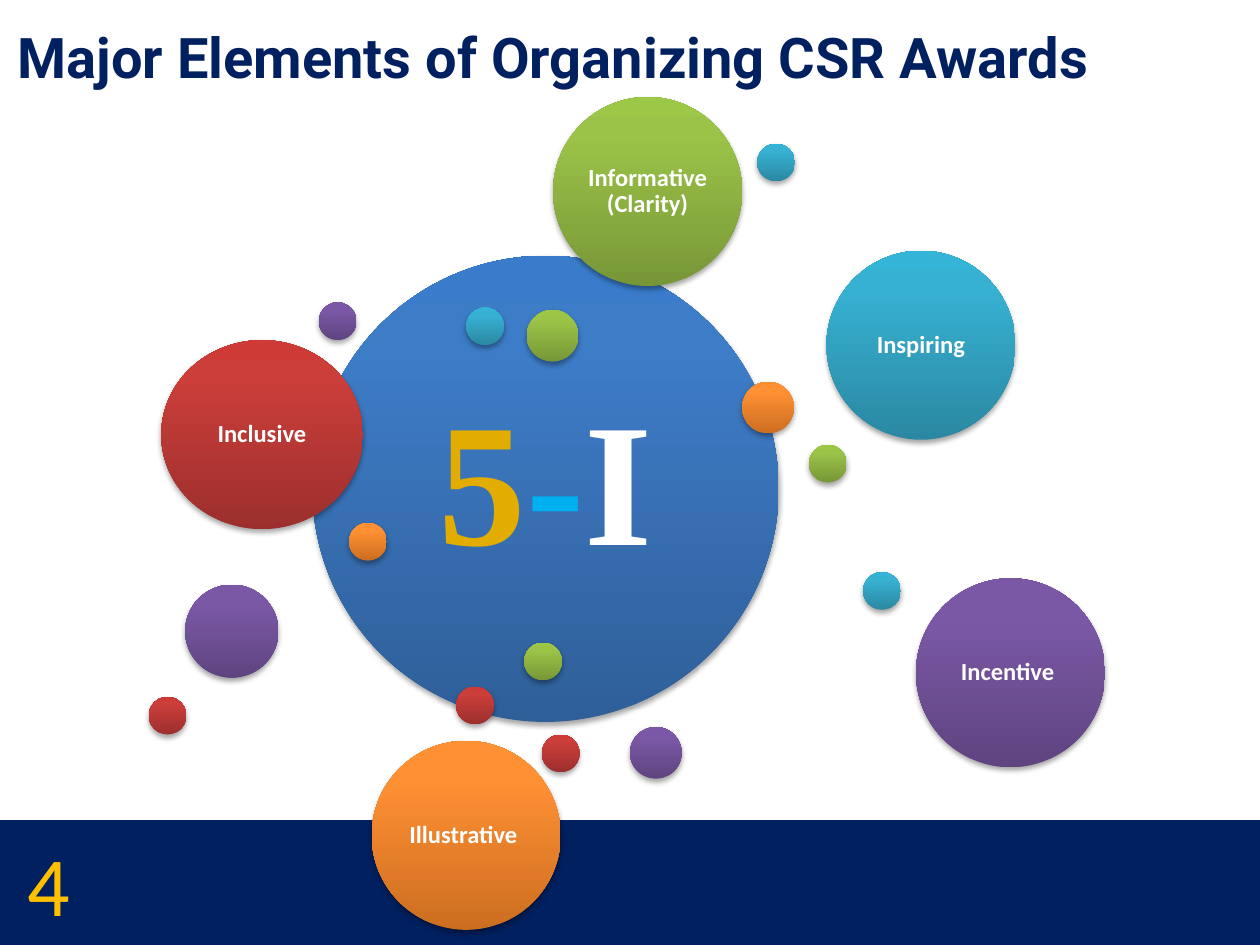
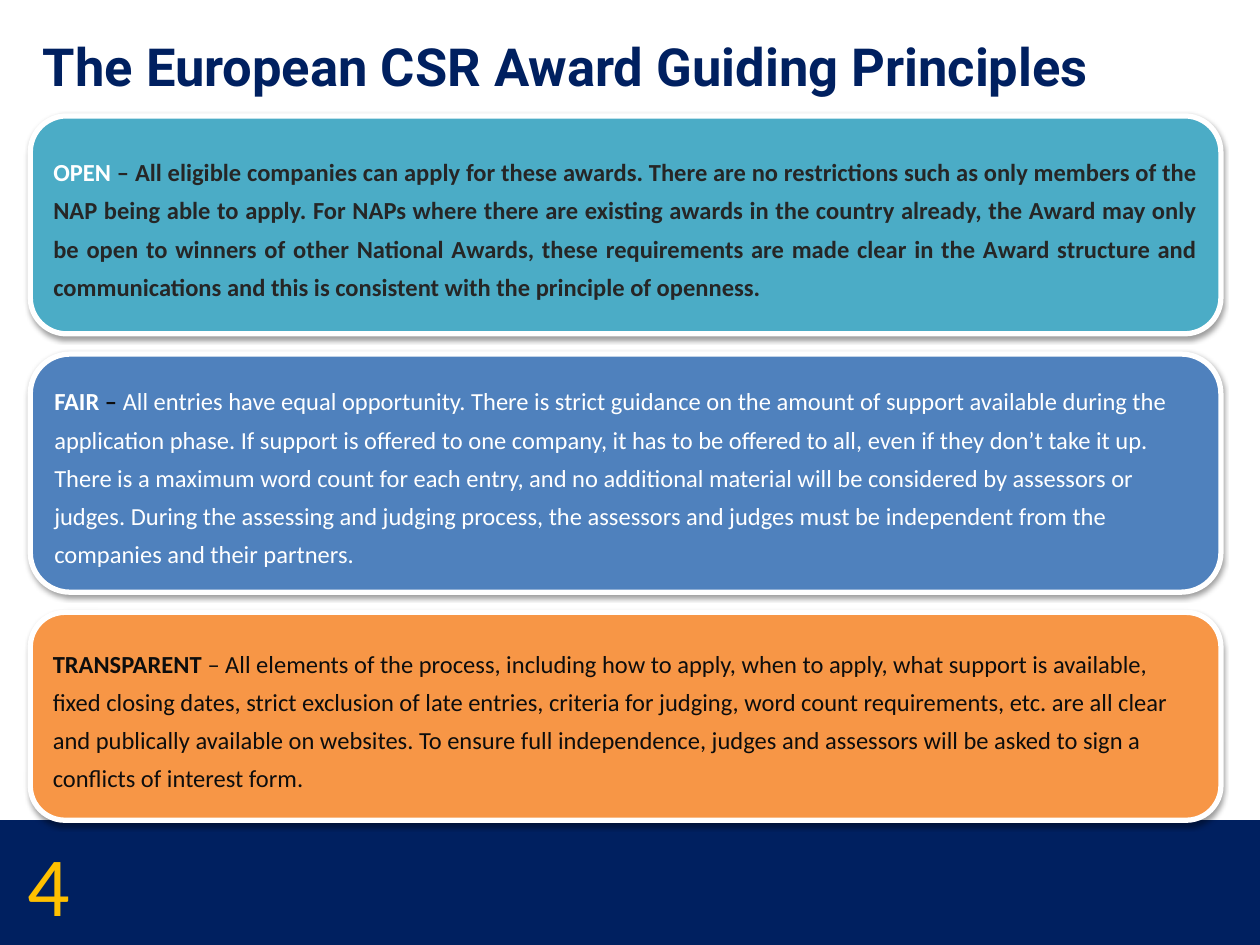
from dataclasses import dataclass

from lxml import etree
from pptx import Presentation
from pptx import util as u
from pptx.dml import color
from pptx.enum import shapes, text
from pptx.oxml import ns


@dataclass(frozen=True)
class Theme:
    navy: str = "002060"
    gold: str = "FFC000"
    amber: str = "E2AC00"
    sky: str = "00B0F0"
    white: str = "FFFFFF"
    ink: str = "0D0D0D"
    charcoal: str = "262626"
    card_teal: str = "4BACC6"
    card_blue: str = "4F81BD"
    card_orange: str = "F79646"
    body: str = "Calibri"
    heading: str = "Roboto"
    serif: str = "Times New Roman"
    body_size: int = 14
    number_size: int = 48
    hub_size: int = 100


T = Theme()
GRADIENTS = {
    "blue": ("2F5F99", "3D7CC7", "3A7CCB"),
    "red": ("9C2F2D", "CB3E3A", "CE3B37"),
    "green": ("779737", "9BC348", "9DC746"),
    "purple": ("5F4480", "7B58A6", "7C57A8"),
    "teal": ("2A88A2", "37B1D2", "34B4D6"),
    "orange": ("CC6E20", "FF9034", "FF9136"),
}
STOPS = (0, 80, 100)

PAGE_NUMBER = "4"
ELEMENTS_TITLE = "Major Elements of Organizing CSR Awards"
PRINCIPLES_TITLE = "The European CSR Award Guiding Principles"

HUB = (2.48, 2.03, 3.7, "blue")
HUB_RUNS = [("5", {"color": T.amber}), ("-", {"color": T.sky}), ("I", {})]
ELEMENTS = [
    ("Inclusive", 1.28, 2.7, 1.6, "red"),
    ("Inspiring", 6.56, 1.99, 1.5, "teal"),
    ("Incentive ", 7.27, 4.59, 1.5, "purple"),
    ("Illustrative ", 2.95, 5.88, 1.5, "orange"),
    ("Informative (Clarity)", 4.39, 0.77, 1.5, "green"),
]
ELEMENT_HEIGHT = 1.5
ELEMENT_INSET = 0.02
SMALL, MEDIUM, LARGE = 0.3, 0.41, 0.74
BUBBLES = [
    (3.62, 5.45, SMALL, "red"),
    (6.42, 3.53, SMALL, "green"),
    (5, 5.77, MEDIUM, "purple"),
    (3.7, 2.44, SMALL, "teal"),
    (2.77, 4.15, SMALL, "orange"),
    (4.18, 2.46, MEDIUM, "green"),
    (1.47, 4.64, LARGE, "purple"),
    (5.89, 3.03, MEDIUM, "orange"),
    (1.18, 5.53, SMALL, "red"),
    (4.16, 5.1, SMALL, "green"),
    (6.85, 4.54, SMALL, "teal"),
    (4.3, 5.83, SMALL, "red"),
    (2.53, 2.4, SMALL, "purple"),
    (6.01, 1.14, SMALL, "teal"),
]

CARD_LEFT, CARD_TOP, CARD_WIDTH, CARD_GAP = 0.24, 0.92, 9.45, 0.16
PRINCIPLES = [
    (1.73, T.card_teal, text.PP_ALIGN.JUSTIFY, [
        ("OPEN ", {"color": T.white, "bold": True}),
        ("– All eligible companies can apply for these awards. There are no "
         "restrictions such as only members of the NAP being able to apply. "
         "For NAPs where there are existing awards in the country already, "
         "the Award may only be open to winners of other National Awards, "
         "these requirements are made clear in the Award structure and "
         "communications and this is consistent with the principle of "
         "openness.", {"color": T.charcoal, "bold": True}),
    ]),
    (1.89, T.card_blue, text.PP_ALIGN.LEFT, [
        ("FAIR ", {"color": T.white, "bold": True}),
        ("– ", {"color": T.ink, "bold": True}),
        ("All entries have equal opportunity. There is strict guidance on the "
         "amount of support available during the application phase. If "
         "support is offered to one company, it has to be offered to all, "
         "even if they don’t take it up. There is a maximum word count for "
         "each entry, and no additional material will be considered by "
         "assessors or judges. During the assessing and judging process, the "
         "assessors and judges must be independent from the companies and "
         "their partners.", {"color": T.white}),
    ]),
    (1.65, T.card_orange, text.PP_ALIGN.LEFT, [
        ("TRANSPARENT ", {"color": T.ink, "bold": True}),
        ("– All elements of the process, including how to apply, when to "
         "apply, what support is available, fixed closing dates, strict "
         "exclusion of late entries, criteria for judging, word count "
         "requirements, etc. are all clear and publically available on "
         "websites. To ensure full independence, judges and assessors will be "
         "asked to sign a conflicts of interest form.", {"color": T.ink}),
    ]),
]


def rgb(value):
    return color.RGBColor.from_string(value)


def inches(*lengths):
    return [u.Inches(n) for n in lengths]


def write(sp, runs, size=T.body_size, font=T.body, color=T.white, bold=False,
          align=text.PP_ALIGN.LEFT, anchor=text.MSO_ANCHOR.MIDDLE,
          spacing=1.0, before=0, inset=None, wrap=True,
          fit=text.MSO_AUTO_SIZE.NONE):
    tf = sp.text_frame
    tf.word_wrap, tf.auto_size, tf.vertical_anchor = wrap, fit, anchor
    if inset is not None:
        tf.margin_left = tf.margin_right = u.Inches(inset)
        tf.margin_top = tf.margin_bottom = u.Inches(inset)
    p = tf.paragraphs[0]
    p.alignment, p.line_spacing, p.space_before = align, spacing, u.Pt(before)
    for content, style in [(runs, {})] if isinstance(runs, str) else runs:
        r = p.add_run()
        r.text = content
        r.font.name, r.font.size = font, u.Pt(size)
        r.font.bold = style.get("bold", bold)
        r.font.color.rgb = rgb(style.get("color", color))


def add_color(parent, value):
    return etree.SubElement(parent, ns.qn("a:srgbClr"), val=value)


def add_shadow(sp, opacity, distance):
    sp.shadow.inherit = False
    effects = sp.element.spPr.find(ns.qn("a:effectLst"))
    shadow = etree.SubElement(
        effects, ns.qn("a:outerShdw"), blurRad=str(u.Pt(3.1)),
        dist=str(u.Pt(distance)), dir="5400000", rotWithShape="0")
    etree.SubElement(add_color(shadow, "000000"), ns.qn("a:alpha"),
                     val=str(opacity * 1000))


def add_circle(s, left, top, width, hue, height=None):
    sp = s.shapes.add_shape(shapes.MSO_SHAPE.OVAL,
                            *inches(left, top, width, height or width))
    sp.fill.gradient()
    sp.fill.gradient_angle = 90
    stops = sp.element.spPr.find(".//" + ns.qn("a:gsLst"))
    for stop in list(stops):
        stops.remove(stop)
    for position, shade in zip(STOPS, GRADIENTS[hue]):
        add_color(etree.SubElement(stops, ns.qn("a:gs"),
                                   pos=str(position * 1000)), shade)
    sp.line.fill.background()
    add_shadow(sp, 35, 1.8)
    return sp


def add_band(layout, s):
    sp = s.shapes.add_shape(shapes.MSO_SHAPE.RECTANGLE,
                            *inches(0, 6.51, 10, 1.01))
    sp.fill.solid()
    sp.fill.fore_color.rgb = rgb(T.navy)
    sp.line.fill.background()
    sp.shadow.inherit = False
    sp.element.nvSpPr.cNvPr.id = 20
    layout.element.cSld.spTree.append(sp.element)


def set_title(s, content, box, size, anchor):
    sp = s.shapes.title
    sp.left, sp.top, sp.width, sp.height = inches(*box)
    write(sp, content, size=size, font=T.heading, color=T.navy, bold=True,
          anchor=anchor, before=6)


def add_page_number(s):
    sp = s.shapes.add_textbox(*inches(0.12, 6.56, 0.61, 0.91))
    write(sp, PAGE_NUMBER, size=T.number_size, color=T.gold, wrap=False,
          anchor=text.MSO_ANCHOR.TOP, fit=text.MSO_AUTO_SIZE.SHAPE_TO_FIT_TEXT)


def build_elements(s):
    set_title(s, ELEMENTS_TITLE, (0.04, 0.13, 9.96, 0.64), 32,
              text.MSO_ANCHOR.TOP)
    centred = {"bold": True, "align": text.PP_ALIGN.CENTER, "spacing": 0.9}
    write(add_circle(s, *HUB), HUB_RUNS, size=T.hub_size, font=T.serif,
          inset=0.42, **centred)
    for label, *place in ELEMENTS:
        sp = add_circle(s, *place, height=ELEMENT_HEIGHT)
        write(sp, label, inset=ELEMENT_INSET, **centred)
    for bubble in BUBBLES:
        add_circle(s, *bubble)
    add_page_number(s)


def build_principles(s):
    set_title(s, PRINCIPLES_TITLE, (0.24, 0.05, 9.76, 0.94), 30,
              text.MSO_ANCHOR.MIDDLE)
    top = CARD_TOP
    for height, fill, align, runs in PRINCIPLES:
        sp = s.shapes.add_shape(shapes.MSO_SHAPE.ROUNDED_RECTANGLE,
                                *inches(CARD_LEFT, top, CARD_WIDTH, height))
        sp.fill.solid()
        sp.fill.fore_color.rgb = rgb(fill)
        sp.line.color.rgb = rgb(T.white)
        sp.line.width = u.Pt(3)
        add_shadow(sp, 38, 1.6)
        write(sp, runs, align=align, spacing=1.3)
        top += height + CARD_GAP
    add_page_number(s)


def main():
    prs = Presentation()
    prs.slide_width, prs.slide_height = inches(10, 7.5)
    layout = prs.slide_layouts[5]
    elements, principles = [prs.slides.add_slide(layout) for _ in range(2)]
    add_band(layout, elements)
    build_elements(elements)
    build_principles(principles)
    prs.save("out.pptx")


if __name__ == "__main__":
    main()
